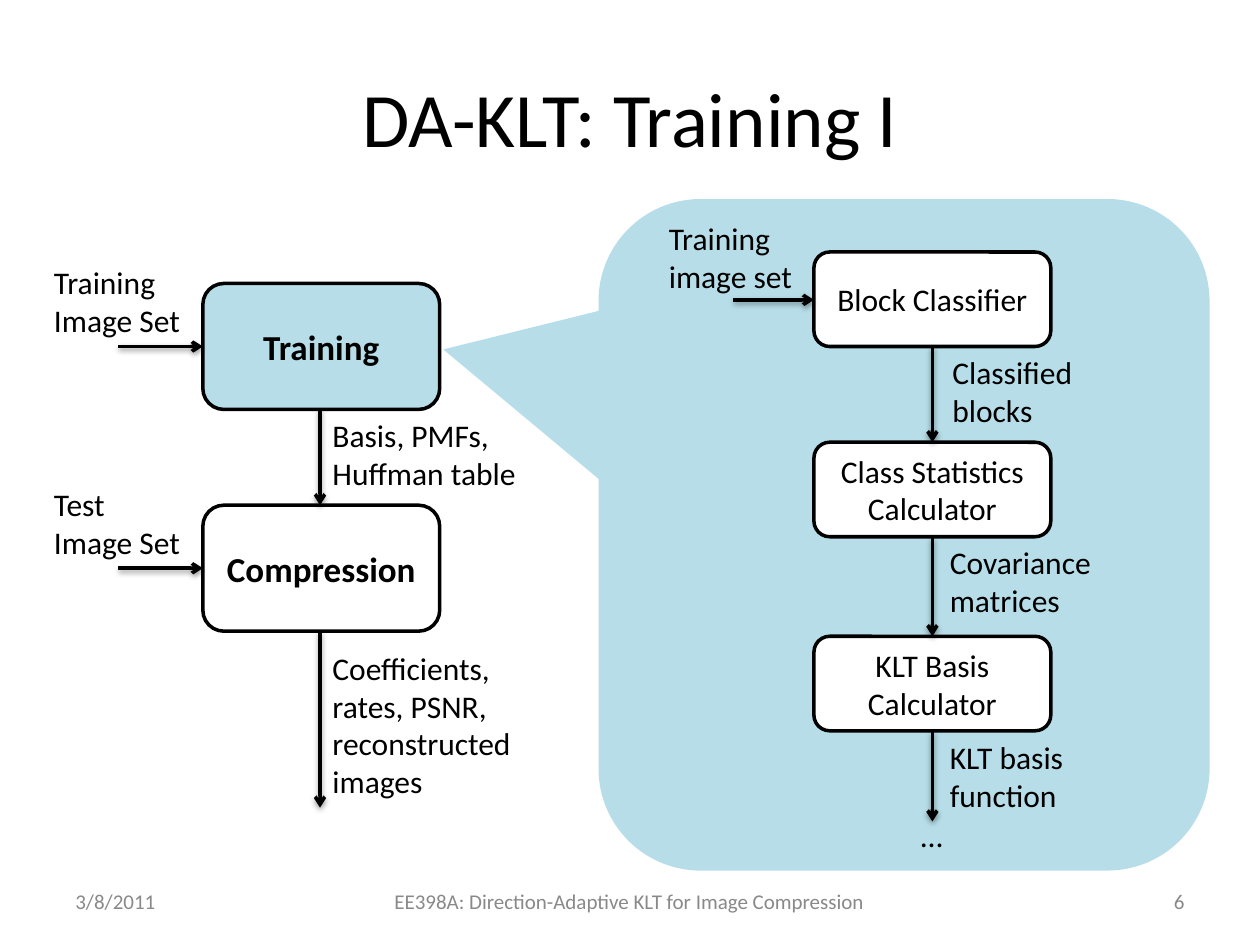
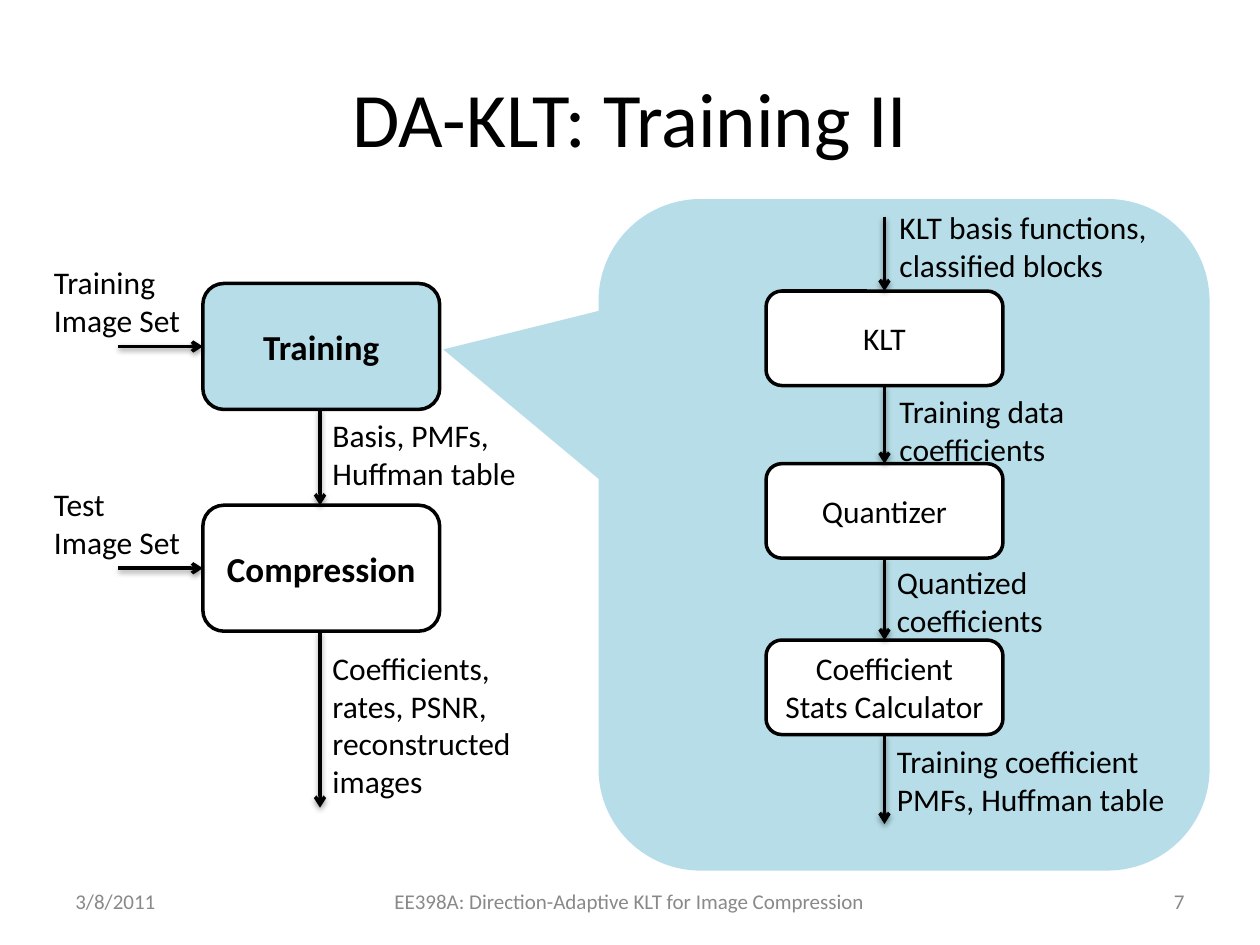
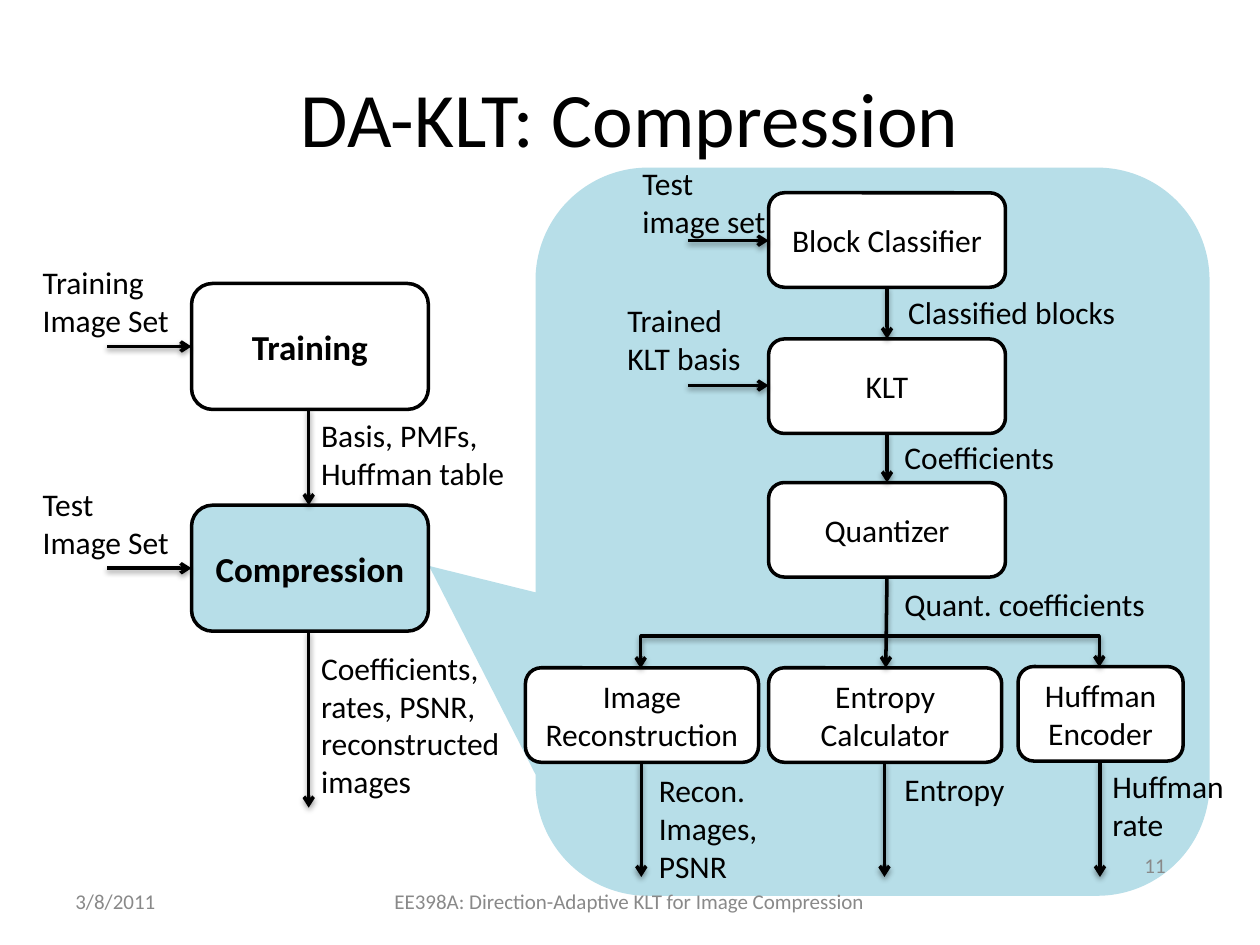
"""Build three slides on training and compression in the DA-KLT coder."""
import pptx
import pptx.dml.color
import pptx.enum.shapes
import pptx.enum.text
import pptx.oxml.ns
import pptx.util
from lxml import etree

PX = 9144
FONT = "Calibri"
BLACK, WHITE, GREY, AQUA = "000000", "FFFFFF", "898989", "B7DEE8"
LEFT, CENTER, RIGHT = (
    pptx.enum.text.PP_ALIGN.LEFT,
    pptx.enum.text.PP_ALIGN.CENTER,
    pptx.enum.text.PP_ALIGN.RIGHT,
)
TOP, MIDDLE = pptx.enum.text.MSO_ANCHOR.TOP, pptx.enum.text.MSO_ANCHOR.MIDDLE
SHAPES = pptx.enum.shapes.MSO_SHAPE
CONNECTORS = pptx.enum.shapes.MSO_CONNECTOR
STEP_WIDTH, STEP_HEIGHT = 188, 75
color = pptx.dml.color.RGBColor.from_string
qn = pptx.oxml.ns.qn


def add_text(page, rect, text, size=18, ink=BLACK, align=LEFT, anchor=TOP, bold=False, fill=None):
    frame = [length * PX for length in rect]
    if fill:
        box = page.shapes.add_shape(SHAPES.ROUNDED_RECTANGLE, *frame)
        box.shadow.inherit = False
        box.fill.solid()
        box.fill.fore_color.rgb = color(fill)
        box.line.color.rgb = color(BLACK)
        box.line.width = pptx.util.Pt(2)
    else:
        box = page.shapes.add_textbox(*frame)
    box.text_frame.word_wrap = True
    box.text_frame.vertical_anchor = anchor
    para = box.text_frame.paragraphs[0]
    para.alignment = align
    span = para.add_run()
    span.text = text
    span.font.name = FONT
    span.font.size = pptx.util.Pt(size)
    span.font.bold = bold
    span.font.color.rgb = color(ink)


def add_arrow(page, begin, end, kind=CONNECTORS.STRAIGHT, heads=("a:tailEnd",)):
    arrow = page.shapes.add_connector(kind, *[length * PX for length in begin + end])
    arrow.line.color.rgb = color(BLACK)
    arrow.line.width = pptx.util.Pt(2)
    properties = arrow._element.spPr
    for head in heads:
        etree.SubElement(properties.find(qn("a:ln")), qn(head), type="arrow")
    effects = etree.SubElement(properties, qn("a:effectLst"))
    shadow = etree.SubElement(
        effects, qn("a:outerShdw"), blurRad="40000", dist="20000", dir="5400000", rotWithShape="0"
    )
    ink = etree.SubElement(shadow, qn("a:srgbClr"), val=BLACK)
    etree.SubElement(ink, qn("a:alpha"), val="38000")
    return arrow


slides = [
    {
        "title": "DA-KLT: Training I",
        "number": ("6", 717, 695),
        "callout": (475, 158, 485, 533),
        "pointer": (-0.754, -0.276, 0.167),
        "active": "Training",
        "overview_left": 161,
        "steps_left": 646,
        "steps": [
            (200, "Block Classifier"),
            (351, "Class Statistics Calculator"),
            (505, "KLT Basis Calculator"),
        ],
        "arrows": [((582, 238), (646, 238)), ((740, 580), (740, 652))],
        "labels": [
            ((521, 169, 121, 71), "Training image set"),
            ((746, 275, 125, 71), "Classified blocks"),
            ((744, 426, 148, 71), "Covariance matrices"),
            ((744, 581, 148, 71), "KLT basis function"),
            ((721, 643, 45, 40), "…"),
        ],
        "outputs": [],
    },
    {
        "title": "DA-KLT: Training II",
        "number": ("7", 717, 695),
        "callout": (475, 158, 485, 533),
        "pointer": (-0.754, -0.276, 0.167),
        "active": "Training",
        "overview_left": 161,
        "steps_left": 608,
        "steps": [(231, "KLT"), (368, "Quantizer"), (508, "Coefficient Stats Calculator")],
        "arrows": [((702, 172), (702, 231)), ((702, 583), (702, 654))],
        "labels": [
            ((704, 160, 231, 71), "KLT basis functions, classified blocks"),
            ((704, 306, 162, 71), "Training data coefficients"),
            ((702, 442, 148, 71), "Quantized coefficients"),
            ((702, 584, 240, 71), "Training coefficient PMFs, Huffman table"),
        ],
        "outputs": [],
    },
    {
        "title": "DA-KLT: Compression",
        "number": ("11", 702, 667),
        "callout": (425, 133, 535, 578),
        "pointer": (-0.658, 0.047, 0.167),
        "active": "Compression",
        "overview_left": 152,
        "steps_left": 610,
        "steps": [(153, "Block Classifier"), (269, "KLT"), (383, "Quantizer")],
        "arrows": [
            ((546, 191), (610, 191)),
            ((546, 306), (610, 306)),
            ((704, 458), (703, 530)),
        ],
        "labels": [
            ((500, 125, 121, 71), "Test image set"),
            ((711, 228, 187, 40), "Classified blocks"),
            ((708, 343, 148, 40), "Coefficients"),
            ((708, 459, 216, 40), "Quant. coefficients"),
            ((488, 234, 121, 71), "Trained KLT basis"),
            ((513, 607, 148, 101), "Recon. Images, PSNR"),
            ((708, 606, 148, 40), "Entropy"),
            ((873, 604, 148, 71), "Huffman rate"),
        ],
        "outputs": [
            (417, 530, 185, "Image Reconstruction"),
            (610, 530, 185, "Entropy Calculator"),
            (808, 529, 131, "Huffman Encoder"),
        ],
    },
]

deck = pptx.Presentation()
deck.slide_width, deck.slide_height = 1000 * PX, 750 * PX

for slide in slides:
    page = deck.slides.add_slide(deck.slide_layouts[6])

    callout = page.shapes.add_shape(
        SHAPES.ROUNDED_RECTANGULAR_CALLOUT, *[length * PX for length in slide["callout"]]
    )
    callout.shadow.inherit = False
    callout.fill.solid()
    callout.fill.fore_color.rgb = color(AQUA)
    callout.line.fill.background()
    for index, value in enumerate(slide["pointer"]):
        callout.adjustments[index] = value

    number, number_left, number_top = slide["number"]
    add_text(page, (50, 30, 900, 125), slide["title"], 44, BLACK, CENTER, MIDDLE)
    add_text(page, (50, 695, 233, 40), "3/8/2011", 12, GREY, LEFT, MIDDLE)
    add_text(page, (283, 695, 433, 40), "EE398A: Direction-Adaptive KLT for Image Compression",
             12, GREY, CENTER, MIDDLE)
    add_text(page, (number_left, number_top, 233, 40), number, 12, GREY, RIGHT, MIDDLE)

    left = slide["overview_left"]
    axis = left + 93
    for top, stage, source in ((225, "Training", "Training Image Set"),
                               (401, "Compression", "Test Image Set")):
        fill = AQUA if stage == slide["active"] else WHITE
        add_text(page, (left, top, STEP_WIDTH, 100), stage, 20, BLACK, CENTER, MIDDLE, True, fill)
        add_arrow(page, (left - 67, top + 50), (left, top + 50))
        add_text(page, (left - 128, top - 21, 121, 71), source)
    add_arrow(page, (axis, 325), (axis, 401))
    add_arrow(page, (axis, 501), (axis, 641))
    add_text(page, (axis, 325, 171, 71), "Basis, PMFs, Huffman table")
    add_text(page, (axis, 510, 171, 131), "Coefficients, rates, PSNR, reconstructed images")

    left = slide["steps_left"]
    axis = left + STEP_WIDTH // 2
    boxes = [(left, top, STEP_WIDTH, name) for top, name in slide["steps"]] + slide["outputs"]
    for box_left, top, width, name in boxes:
        add_text(page, (box_left, top, width, STEP_HEIGHT), name,
                 align=CENTER, anchor=MIDDLE, fill=WHITE)
    for (upper, _), (lower, _) in zip(slide["steps"], slide["steps"][1:]):
        add_arrow(page, (axis, upper + STEP_HEIGHT), (axis, lower))
    for begin, end in slide["arrows"]:
        add_arrow(page, begin, end)
    for box_left, top, width, name in slide["outputs"]:
        middle = box_left + width // 2
        add_arrow(page, (middle, top + STEP_HEIGHT), (middle, 696))
    if slide["outputs"]:
        split = add_arrow(page, (691, 712), (690, 348), CONNECTORS.ELBOW,
                          ("a:headEnd", "a:tailEnd"))
        split._element.spPr.find(qn("a:xfrm")).set("rot", "5400000")
        guides = split._element.spPr.find(qn("a:prstGeom")).find(qn("a:avLst"))
        etree.SubElement(guides, qn("a:gd"), name="adj1", fmla="val 2600000")
    for rect, text in slide["labels"]:
        add_text(page, rect, text)

deck.save("out.pptx")
